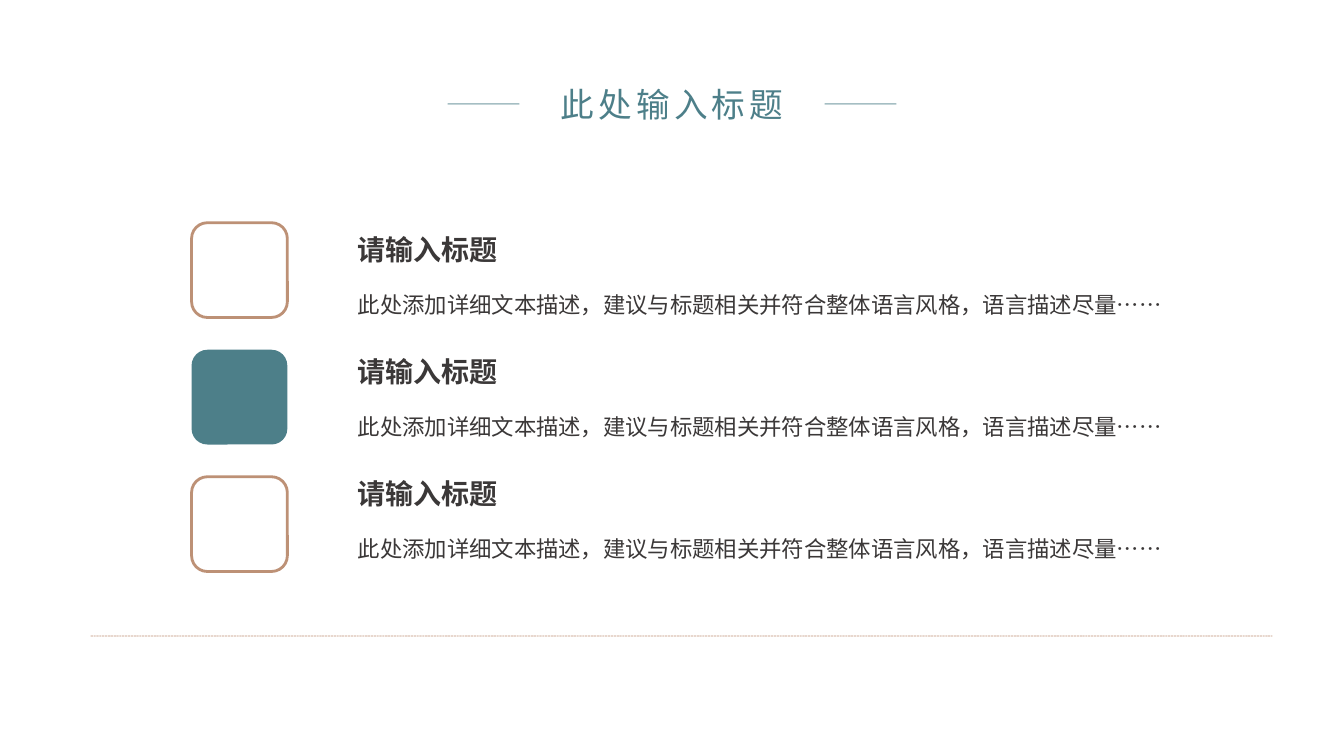
from lxml.etree import SubElement
from pptx import Presentation
from pptx.dml.color import RGBColor
from pptx.enum.dml import MSO_LINE
from pptx.enum.shapes import MSO_CONNECTOR, MSO_SHAPE
from pptx.enum.text import MSO_AUTO_SIZE, PP_ALIGN
from pptx.oxml.ns import qn
from pptx.util import Inches, Pt

COLORS = {"teal": "4D7F89", "copper": "A2633C", "ink": "3B3838"}
FONT = "Noto Sans CJK SC"
HEADING = "请输入标题"
DETAIL = "此处添加详细文本描述，建议与标题相关并符合整体语言风格，语言描述尽量……"


def style_line(line, color, width, opacity):
    line.color.rgb = RGBColor.from_string(COLORS[color])
    line.width = Pt(width)
    color_node = line.fill._xPr.find(f".//{qn('a:srgbClr')}")
    SubElement(color_node, qn("a:alpha"), val=str(opacity * 1000))


def add_rule(slide, left, right, y, color, width, opacity):
    rule = slide.shapes.add_connector(
        MSO_CONNECTOR.STRAIGHT, Inches(left), Inches(y), Inches(right), Inches(y))
    style_line(rule.line, color, width, opacity)
    SubElement(rule._element.spPr, qn("a:effectLst"))
    return rule


def add_text(slide, box, text, size, color, bold=False):
    frame = slide.shapes.add_textbox(*map(Inches, box)).text_frame
    frame.word_wrap = True
    frame.auto_size = MSO_AUTO_SIZE.SHAPE_TO_FIT_TEXT
    frame.text = text
    paragraph = frame.paragraphs[0]
    font = paragraph.runs[0].font
    font.size, font.bold, font.name = Pt(size), bold, FONT
    font.color.rgb = RGBColor.from_string(COLORS[color])
    SubElement(font._element, qn("a:ea"), typeface=FONT)
    return paragraph


def add_title(slide, left, top, width, height):
    middle = top + height / 2
    dash = 0.71
    for start in (left, left + width - dash):
        add_rule(slide, start, start + dash, middle, "teal", 1, 50)
    title = add_text(slide, (left + 0.75, top, width - 1.5, height), "此处输入标题", 24, "teal")
    title.alignment = PP_ALIGN.CENTER
    title.runs[0].font._element.set("spc", "300")


def add_markers(slide, left, top, width, height, pitch):
    for row, filled in enumerate((False, True, False)):
        marker = slide.shapes.add_shape(
            MSO_SHAPE.ROUNDED_RECTANGLE, Inches(left), Inches(top + row * pitch),
            Inches(width), Inches(height))
        marker.shadow.inherit = False
        if filled:
            marker.fill.solid()
            marker.fill.fore_color.rgb = RGBColor.from_string(COLORS["teal"])
            marker.line.fill.background()
        else:
            marker.fill.background()
            style_line(marker.line, "copper", 2, 70)


def add_entries(slide, left, top, width, pitch):
    for row in range(3):
        y = top + row * pitch
        add_text(slide, (left, y, 2.14, 0.44), HEADING, 20, "ink", True)
        detail = add_text(slide, (left, y + 0.5, width, 0.43), DETAIL, 16, "ink")
        detail.line_spacing = 1.3


def main():
    deck = Presentation()
    deck.slide_width, deck.slide_height = Inches(13.33), Inches(7.5)
    slide = deck.slides.add_slide(deck.slide_layouts[6])
    add_markers(slide, 1.9, 2.21, 0.95, 0.94, 1.26)
    add_entries(slide, 3.45, 2.26, 8.41, 1.21)
    footer = add_rule(slide, 0.9, 12.62, 6.31, "copper", 0.5, 70)
    footer.line.dash_style = MSO_LINE.SQUARE_DOT
    add_title(slide, 4.44, 0.78, 4.45, 0.5)
    deck.save("out.pptx")


if __name__ == "__main__":
    main()
